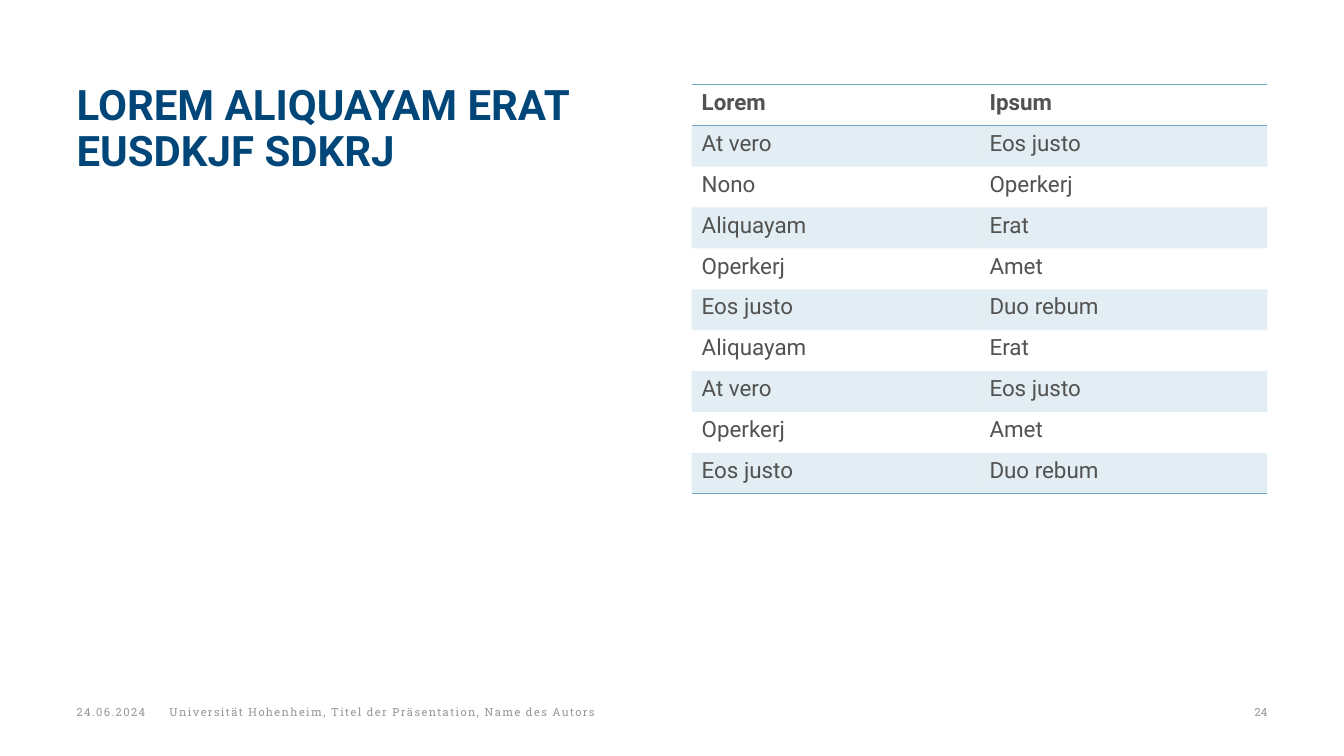
from dataclasses import dataclass

from lxml import etree
from pptx import Presentation
from pptx.dml.color import RGBColor
from pptx.enum.text import MSO_ANCHOR, MSO_AUTO_SIZE, PP_ALIGN
from pptx.oxml import parse_xml
from pptx.oxml.ns import nsdecls, qn
from pptx.util import Inches, Pt

TOP, MIDDLE = MSO_ANCHOR.TOP, MSO_ANCHOR.MIDDLE
LEFT, RIGHT = PP_ALIGN.LEFT, PP_ALIGN.RIGHT
TITLE_ONLY = 5
NO_STYLE = "{2D5ABB26-0587-4C30-8999-92F81FD0307C}"

SLIDE_W, SLIDE_H = 13.33, 7.5
MARGIN, GUTTER, BODY_TOP, BODY_H = 0.76, 0.39, 0.84, 5.75
COL_W = (SLIDE_W - 2 * MARGIN - GUTTER) / 2
TABLE_LEFT = MARGIN + COL_W + GUTTER
ROW_H = 0.406
FOOTER_TOP, FOOTER_H = 6.76, 0.6

NAVY, TEAL, TEXT, GREY = "004678", "6EAAC3", "525250", "989898"
SANS, SLAB = "Roboto", "Roboto Slab"

ROWS = [
    ("Lorem", "Ipsum"),
    ("At vero", "Eos justo"),
    ("Nono", "Operkerj"),
    ("Aliquayam", "Erat"),
    ("Operkerj", "Amet"),
    ("Eos justo", "Duo rebum"),
    ("Aliquayam", "Erat"),
    ("At vero", "Eos justo"),
    ("Operkerj", "Amet"),
    ("Eos justo", "Duo rebum"),
]


@dataclass
class FooterItem:
    text: str
    left: float
    width: float
    align: PP_ALIGN = LEFT
    spacing: int = 100


FOOTER = [
    FooterItem("24.06.2024", MARGIN, 0.78),
    FooterItem("Universität Hohenheim, Titel der Präsentation, Name des Autors",
               1.68, 9.84),
    FooterItem("24", 11.66, 0.91, RIGHT, 0),
]


def rgb(value: str) -> RGBColor:
    return RGBColor.from_string(value)


def format_text(tf, size: float, font: str, color: str,
                bold: bool = False, align: PP_ALIGN = LEFT) -> None:
    for p in tf.paragraphs:
        p.alignment = align
        for r in p.runs:
            r.font.size, r.font.name, r.font.bold = Pt(size), font, bold
            r.font.color.rgb = rgb(color)


def frame_box(tf, anchor: MSO_ANCHOR) -> None:
    """Wrap the text, fix its box and remove the insets."""
    tf.word_wrap, tf.auto_size = True, MSO_AUTO_SIZE.NONE
    tf.vertical_anchor = anchor
    tf.margin_left = tf.margin_right = tf.margin_top = tf.margin_bottom = 0


def add_title(s) -> None:
    title = s.shapes.title
    title.left, title.top = Inches(MARGIN), Inches(BODY_TOP)
    title.width, title.height = Inches(COL_W), Inches(BODY_H)
    tf = title.text_frame
    tf.text = "LOREM ALIQUAYAM ERAT\vEUSDKJF SDKRJ"
    frame_box(tf, TOP)
    format_text(tf, 30, SANS, NAVY, bold=True)
    tf.paragraphs[0].line_spacing = 0.9


def add_footer_item(s, item: FooterItem) -> None:
    box = s.shapes.add_textbox(Inches(item.left), Inches(FOOTER_TOP),
                               Inches(item.width), Inches(FOOTER_H))
    tf = box.text_frame
    tf.text = item.text
    frame_box(tf, MIDDLE)
    format_text(tf, 8, SLAB, GREY, align=item.align)
    if item.spacing:
        r = tf.paragraphs[0].runs[0]
        r.font._element.set("spc", str(item.spacing))


def add_border(cell, side: str) -> None:
    line = parse_xml(
        f'<a:{side} {nsdecls("a")} w="{Pt(1)}"><a:solidFill>'
        f'<a:srgbClr val="{TEAL}"/></a:solidFill></a:{side}>')
    cell._tc.get_or_add_tcPr().insert(0, line)


def fill_cell(cell, banded: bool) -> None:
    if not banded:
        cell.fill.background()
        return
    cell.fill.solid()
    cell.fill.fore_color.rgb = rgb(TEAL)
    color = cell._tc.tcPr.find(f'{qn("a:solidFill")}/{qn("a:srgbClr")}')
    etree.SubElement(color, qn("a:alpha")).set("val", "20000")


def add_table(s) -> None:
    last = len(ROWS) - 1
    frame = s.shapes.add_table(len(ROWS), 2, Inches(TABLE_LEFT), Inches(BODY_TOP),
                               Inches(COL_W), Inches(ROW_H * len(ROWS)))
    table = frame.table
    table._tbl.tblPr.find(qn("a:tableStyleId")).text = NO_STYLE
    for i, row in enumerate(ROWS):
        for j, text in enumerate(row):
            cell = table.cell(i, j)
            cell.text = text
            format_text(cell.text_frame, 16, SANS, TEXT, bold=i == 0)
            fill_cell(cell, banded=i % 2 == 1)
            if i in (0, last):
                add_border(cell, "lnB")
            if i == 0:
                add_border(cell, "lnT")


def main() -> None:
    prs = Presentation()
    prs.slide_width, prs.slide_height = Inches(SLIDE_W), Inches(SLIDE_H)
    s = prs.slides.add_slide(prs.slide_layouts[TITLE_ONLY])
    add_title(s)
    for item in FOOTER:
        add_footer_item(s, item)
    add_table(s)
    prs.save("out.pptx")


if __name__ == "__main__":
    main()
